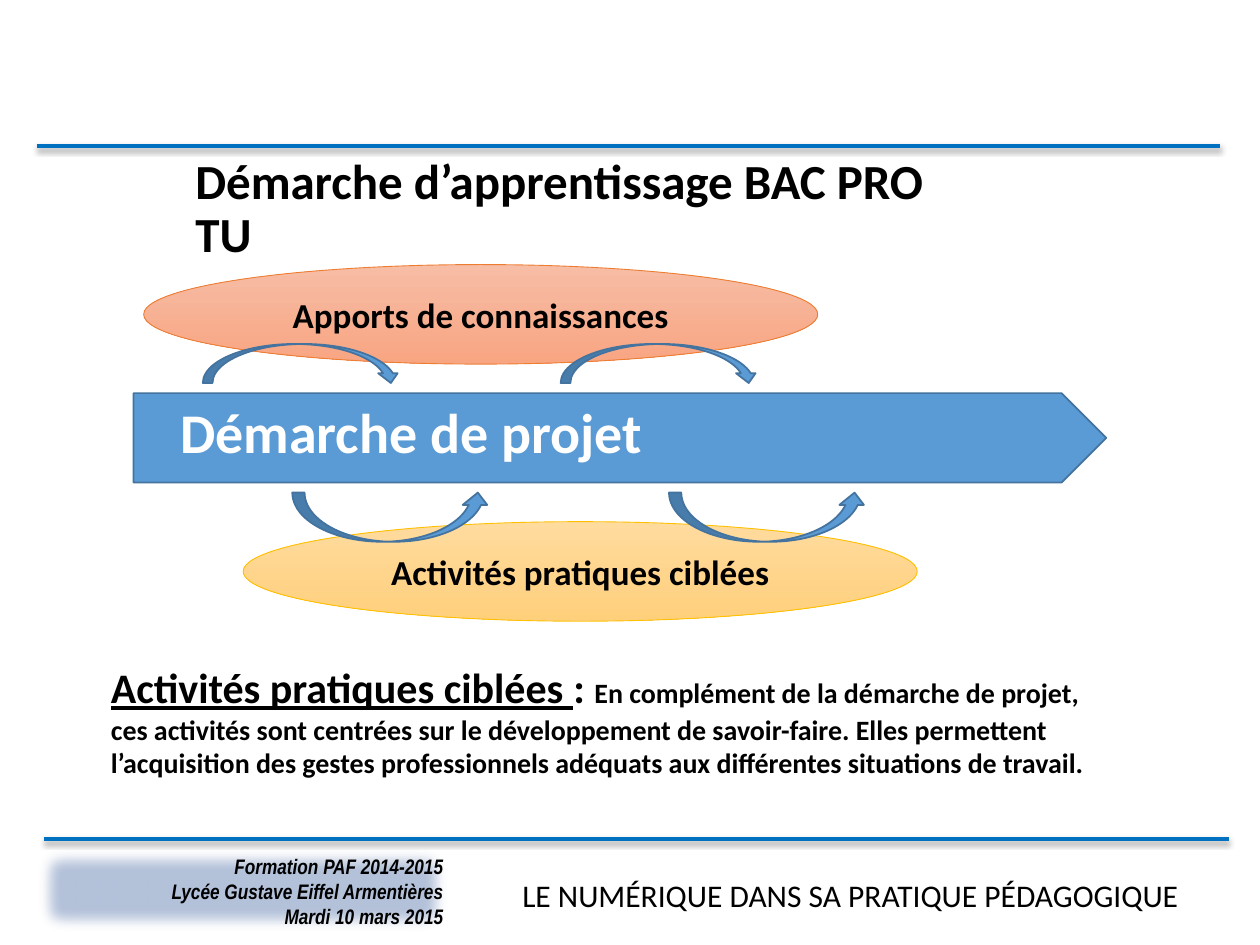
"""Build the slide on the learning approach of the BAC PRO TU course."""
from dataclasses import dataclass

from lxml.etree import SubElement
from pptx import Presentation
from pptx.dml.color import RGBColor
from pptx.enum.shapes import MSO_CONNECTOR, MSO_SHAPE
from pptx.enum.text import MSO_ANCHOR, MSO_AUTO_SIZE, PP_ALIGN
from pptx.oxml import parse_xml
from pptx.oxml.ns import nsdecls, qn
from pptx.shapes.autoshape import Shape
from pptx.slide import Slide
from pptx.text.text import TextFrame
from pptx.util import Inches, Pt

BLACK = RGBColor(0x00, 0x00, 0x00)
WHITE = RGBColor(0xFF, 0xFF, 0xFF)
RULE_BLUE = RGBColor(0x00, 0x70, 0xC0)
BLUE = RGBColor(0x5B, 0x9B, 0xD5)
DARK_BLUE = RGBColor(0x43, 0x73, 0x9E)
NAVY = RGBColor(0x2F, 0x55, 0x97)
ORANGE = RGBColor(0xED, 0x7D, 0x31)
PEACH = RGBColor(0xF7, 0xBD, 0xA5)
SALMON = RGBColor(0xF8, 0xA5, 0x82)
GOLD = RGBColor(0xFF, 0xC0, 0x00)
CREAM = RGBColor(0xFF, 0xDB, 0x9E)
SAND = RGBColor(0xFF, 0xD0, 0x7C)

RULE_SHADOW = (
    '<a:outerShdw blurRad="39400" dist="22900" dir="5400000" rotWithShape="0">'
    '<a:srgbClr val="000000"><a:alpha val="35000"/></a:srgbClr></a:outerShdw>'
)
SOFT_EDGE = '<a:softEdge rad="112500"/>'


@dataclass
class Box:
    left: float
    top: float
    width: float
    height: float

    def lengths(self) -> tuple:
        return tuple(map(Inches, (self.left, self.top, self.width, self.height)))


@dataclass
class Ellipse:
    label: str
    box: Box
    start: RGBColor
    end: RGBColor
    outline: RGBColor


@dataclass
class CurvedArrow:
    box: Box
    flipped: bool


@dataclass
class Rule:
    left: float
    right: float
    y: float


RULES = [Rule(0.29, 9.68, 1.16), Rule(0.35, 9.75, 6.66)]
ELLIPSES = [
    Ellipse("Activités pratiques ciblées", Box(1.93, 4.14, 5.35, 0.79), CREAM, SAND, GOLD),
    Ellipse("Apports de connaissances", Box(1.14, 2.1, 5.35, 0.79), PEACH, SALMON, ORANGE),
]
ARROWS = [CurvedArrow(Box(x, 2.73, 1.57, 0.31), False) for x in (4.45, 1.61)]
ARROWS += [CurvedArrow(Box(x, 3.91, 1.57, 0.39), True) for x in (2.32, 5.31)]
FOOTER_LINES = ["Formation PAF 2014-2015", "Lycée Gustave Eiffel Armentières", "Mardi 10 mars 2015"]
BODY_RUNS = [
    ("Activités pratiques ciblées ", 24, True),
    (": ", 24, False),
    ("En complément de la démarche de projet, ces activités sont centrées sur le "
     "développement de savoir-faire. Elles permettent l’acquisition des gestes "
     "professionnels adéquats aux différentes situations de travail.", 16, False),
]


def set_effect(sp, effect: str) -> None:
    sp._element.spPr.append(parse_xml(f'<a:effectLst {nsdecls("a")}>{effect}</a:effectLst>'))


def set_frame(tf: TextFrame, anchor: MSO_ANCHOR, inset_x: float, inset_y: float) -> None:
    tf.word_wrap = True
    tf.auto_size = MSO_AUTO_SIZE.NONE
    tf.vertical_anchor = anchor
    tf.margin_left = tf.margin_right = Inches(inset_x)
    tf.margin_top = tf.margin_bottom = Inches(inset_y)


def style(p, size: float, color: RGBColor = BLACK, bold: bool = True,
          align: PP_ALIGN = PP_ALIGN.LEFT, name: str = "Calibri") -> None:
    p.alignment = align
    p.font.name = name
    p.font.size = Pt(size)
    p.font.bold = bold
    p.font.color.rgb = color


def add_text(s: Slide, box: Box, inset: float) -> TextFrame:
    tf = s.shapes.add_textbox(*box.lengths()).text_frame
    set_frame(tf, MSO_ANCHOR.MIDDLE, inset, 0.05)
    return tf


def add_rule(s: Slide, rule: Rule) -> None:
    y = Inches(rule.y)
    line = s.shapes.add_connector(MSO_CONNECTOR.STRAIGHT, Inches(rule.left), y, Inches(rule.right), y)
    line.line.color.rgb = RULE_BLUE
    line.line.width = Pt(2.25)
    set_effect(line, RULE_SHADOW)


def add_blue_shape(s: Slide, kind: MSO_SHAPE, box: Box) -> Shape:
    sp = s.shapes.add_shape(kind, *box.lengths())
    sp.shadow.inherit = False
    sp.fill.solid()
    sp.fill.fore_color.rgb = BLUE
    sp.line.color.rgb = DARK_BLUE
    sp.line.width = Pt(1)
    return sp


def add_arrow(s: Slide, arrow: CurvedArrow) -> None:
    sp = add_blue_shape(s, MSO_SHAPE.CURVED_DOWN_ARROW, arrow.box)
    if arrow.flipped:
        sp._element.spPr.find(qn("a:xfrm")).set("flipV", "1")


def add_ellipse(s: Slide, ellipse: Ellipse) -> None:
    sp = s.shapes.add_shape(MSO_SHAPE.OVAL, *ellipse.box.lengths())
    sp.shadow.inherit = False
    sp.fill.gradient()
    sp.fill.gradient_angle = 270
    for stop, color in zip(sp.fill.gradient_stops, (ellipse.start, ellipse.end)):
        stop.color.rgb = color
    sp.line.color.rgb = ellipse.outline
    sp.line.width = Pt(0.5)
    tf = sp.text_frame
    set_frame(tf, MSO_ANCHOR.MIDDLE, 0.1, 0.05)
    p = tf.paragraphs[0]
    p.text = ellipse.label
    style(p, 20, align=PP_ALIGN.CENTER)


def add_footer(s: Slide) -> None:
    sp = s.shapes.add_shape(MSO_SHAPE.RECTANGLE, *Box(0.24, 6.67, 3.37, 0.78).lengths())
    sp.fill.solid()
    sp.fill.fore_color.rgb = NAVY
    color = sp._element.spPr.find(qn("a:solidFill"))[0]
    SubElement(color, qn("a:alpha")).set("val", "36000")
    sp.line.fill.background()
    set_effect(sp, SOFT_EDGE)
    tf = sp.text_frame
    set_frame(tf, MSO_ANCHOR.TOP, 0.09, 0.1)
    tf.text = "\n".join(FOOTER_LINES)
    for p in tf.paragraphs:
        style(p, 12, align=PP_ALIGN.RIGHT, name="Arial Narrow")
        p.font.italic = True
    p = add_text(s, Box(3.9, 6.9, 5.7, 0.4), 0.1).paragraphs[0]
    p.text = "LE NUMÉRIQUE DANS SA PRATIQUE PÉDAGOGIQUE"
    style(p, 18, bold=False, align=PP_ALIGN.CENTER)


def add_title(s: Slide) -> None:
    title = s.shapes.title
    title.left, title.top, title.width, title.height = Box(1.46, 1.23, 6.38, 0.87).lengths()
    set_frame(title.text_frame, MSO_ANCHOR.MIDDLE, 0.09, 0.04)
    p = title.text_frame.paragraphs[0]
    p.text = "Démarche d’apprentissage BAC PRO TU"
    p.line_spacing = 0.9
    style(p, 28)


def add_body(s: Slide) -> None:
    p = add_text(s, Box(0.83, 5.09, 8.11, 1.26), 0.05).paragraphs[0]
    style(p, 16)
    for text, size, underline in BODY_RUNS:
        r = p.add_run()
        r.text = text
        r.font.size = Pt(size)
        r.font.underline = underline


def main() -> None:
    prs = Presentation()
    prs.slide_width, prs.slide_height = Inches(10), Inches(7.5)
    s = prs.slides.add_slide(prs.slide_layouts[5])
    for rule in RULES:
        add_rule(s, rule)
    add_footer(s)
    add_body(s)
    add_title(s)
    for ellipse in ELLIPSES:
        add_ellipse(s, ellipse)
    add_blue_shape(s, MSO_SHAPE.PENTAGON, Box(1.06, 3.12, 7.72, 0.71))
    p = add_text(s, Box(1.38, 3.2, 6.06, 0.44), 0.05).paragraphs[0]
    p.text = "Démarche de projet"
    style(p, 32, WHITE)
    for arrow in ARROWS:
        add_arrow(s, arrow)
    prs.save("out.pptx")


if __name__ == "__main__":
    main()
